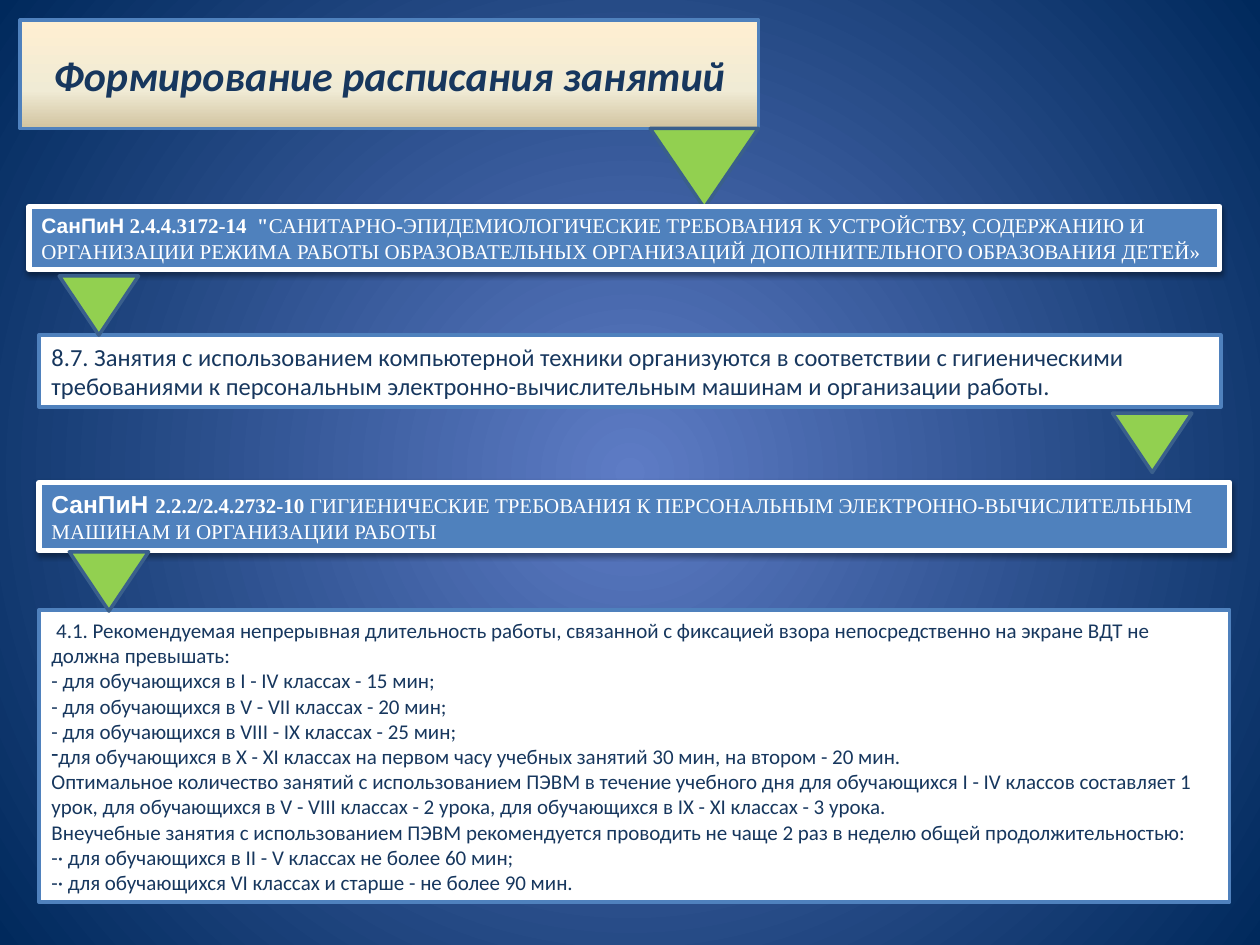
from dataclasses import dataclass

import pptx
import pptx.dml.color
import pptx.enum.shapes
import pptx.enum.text
import pptx.oxml
import pptx.oxml.ns
import pptx.util
from pptx.util import Inches

SHAPES = pptx.enum.shapes.MSO_SHAPE
ALIGN = pptx.enum.text.PP_ALIGN
NAVY, BLUE, WHITE = "17375E", "4F81BD", "FFFFFF"
GREEN, GREEN_EDGE = "92D050", "3A5F8C"

BODY = {"name": "Calibri", "color": NAVY}
HEADING = {"name": "Times New Roman", "size": 12, "color": WHITE}
HEADING_BOLD = HEADING | {"bold": True}
HEADING_ARIAL = HEADING_BOLD | {"name": "Arial"}


@dataclass
class Run:
    text: str
    format: dict


@dataclass
class Box:
    left: float
    top: float
    width: float
    height: float
    paragraphs: list[list[Run]]
    fill: str = WHITE
    line: str = BLUE
    line_width: float = 2
    shadow: bool = False
    grow: bool = True
    align: ALIGN = ALIGN.LEFT
    dash_bullets: tuple = ()


@dataclass
class Pointer:
    left: float
    top: float
    width: float = 0.63
    height: float = 0.47


def rgb(color: str) -> pptx.dml.color.RGBColor:
    return pptx.dml.color.RGBColor.from_string(color)


def element(xml: str):
    tag_end = min(xml.index(character) for character in " />" if character in xml)
    return pptx.oxml.parse_xml(
        f"{xml[:tag_end]} {pptx.oxml.ns.nsdecls('a')}{xml[tag_end:]}")


def set_gradient(fill, parent, stops: list, direction: str) -> None:
    """Replace the default gradient in parent by the given stops."""
    fill.gradient()
    default = next(parent.iter(pptx.oxml.ns.qn("a:gradFill")))
    stop_xml = "".join(
        f'<a:gs pos="{position * 1000}"><a:srgbClr val="{color}"/></a:gs>'
        for position, color in stops)
    gradient = element(
        f'<a:gradFill rotWithShape="1"><a:gsLst>{stop_xml}</a:gsLst>{direction}</a:gradFill>')
    default.getparent().replace(default, gradient)


def add_shape(slide, kind, item: Box | Pointer, fill: str, line: str, line_width: float):
    shape = slide.shapes.add_shape(
        kind, *(Inches(value) for value in (item.left, item.top, item.width, item.height)))
    shape.shadow.inherit = False
    shape.fill.solid()
    shape.fill.fore_color.rgb = rgb(fill)
    shape.line.color.rgb = rgb(line)
    shape.line.width = pptx.util.Pt(line_width)
    return shape


def add_pointer(slide, pointer: Pointer) -> None:
    add_shape(slide, SHAPES.FLOWCHART_MERGE, pointer, GREEN, GREEN_EDGE, 2)


def add_run(paragraph, content: Run) -> None:
    run = paragraph.add_run()
    run.text = content.text
    for name, value in content.format.items():
        if name == "color":
            run.font.color.rgb = rgb(value)
        else:
            setattr(run.font, name, pptx.util.Pt(value) if name == "size" else value)


def add_box(slide, box: Box):
    shape = add_shape(slide, SHAPES.RECTANGLE, box, box.fill, box.line, box.line_width)
    if box.shadow:
        effects = shape._element.spPr.find(pptx.oxml.ns.qn("a:effectLst"))
        effects.append(element(
            f'<a:outerShdw blurRad="{pptx.util.Pt(3.1)}" dist="{pptx.util.Pt(1.6)}" '
            'dir="5400000" rotWithShape="0"><a:srgbClr val="000000">'
            '<a:alpha val="38000"/></a:srgbClr></a:outerShdw>'))
    frame = shape.text_frame
    frame.word_wrap = True
    frame.vertical_anchor = pptx.enum.text.MSO_ANCHOR.MIDDLE
    if box.grow:
        frame.auto_size = pptx.enum.text.MSO_AUTO_SIZE.SHAPE_TO_FIT_TEXT
    for index, runs in enumerate(box.paragraphs):
        paragraph = frame.add_paragraph() if index else frame.paragraphs[0]
        paragraph.alignment = box.align
        if index in box.dash_bullets:
            paragraph._p.get_or_add_pPr().append(element('<a:buChar char="-"/>'))
        for run in runs:
            add_run(paragraph, run)
    return shape


TITLE = Box(
    0.16, 0.16, 5.86, 0.86,
    [[Run("Формирование расписания занятий",
          BODY | {"size": 24, "bold": True, "italic": True})]],
    grow=False, align=ALIGN.CENTER)

RULES = [
    "\u00204.1. Рекомендуемая непрерывная длительность работы, связанной с фиксацией взора "
    "непосредственно на экране ВДТ не должна превышать:",
    "- для обучающихся в I - IV классах - 15 мин;",
    "- для обучающихся в V - VII классах - 20 мин;",
    "- для обучающихся в VIII - IX классах - 25 мин;",
    "для обучающихся в X - XI классах на первом часу учебных занятий 30 мин, "
    "на втором - 20 мин.",
    "Оптимальное количество занятий с использованием ПЭВМ в течение учебного дня для "
    "обучающихся I - IV классов составляет 1 урок, для обучающихся в V - VIII классах - "
    "2 урока, для обучающихся в IX - XI классах - 3 урока.",
    "Внеучебные занятия с использованием ПЭВМ рекомендуется проводить не чаще 2 раз в "
    "неделю общей продолжительностью:",
    "-· для обучающихся в II - V классах не более 60 мин;",
    "-· для обучающихся VI классах и старше - не более 90 мин.",
]
RULES[0] = " " + RULES[0].lstrip()

BOXES = [
    Box(0.23, 1.64, 9.45, 0.5,
        [[Run("СанПиН", HEADING_ARIAL),
          Run(' 2.4.4.3172-14  "', HEADING_BOLD),
          Run("САНИТАРНО-ЭПИДЕМИОЛОГИЧЕСКИЕ ТРЕБОВАНИЯ К УСТРОЙСТВУ, СОДЕРЖАНИЮ И "
              "ОРГАНИЗАЦИИ РЕЖИМА РАБОТЫ ОБРАЗОВАТЕЛЬНЫХ ОРГАНИЗАЦИЙ ДОПОЛНИТЕЛЬНОГО "
              "ОБРАЗОВАНИЯ ДЕТЕЙ»", HEADING)]],
        fill=BLUE, line=WHITE, line_width=3, shadow=True),
    Box(0.31, 2.66, 9.38, 0.57,
        [[Run("8.7. Занятия с использованием компьютерной техники организуются в "
              "соответствии с гигиеническими требованиями к персональным "
              "электронно-вычислительным машинам и организации работы.",
              BODY | {"size": 14})]]),
    Box(0.31, 3.83, 9.45, 0.54,
        [[Run("СанПиН ", HEADING_ARIAL | {"size": 14}),
          Run("2.2.2/2.4.2732-10", HEADING_BOLD),
          Run(" ГИГИЕНИЧЕСКИЕ ТРЕБОВАНИЯ К ПЕРСОНАЛЬНЫМ ЭЛЕКТРОННО-ВЫЧИСЛИТЕЛЬНЫМ "
              "МАШИНАМ И ОРГАНИЗАЦИИ РАБОТЫ", HEADING)]],
        fill=BLUE, line=WHITE, line_width=3, shadow=True),
    Box(0.31, 4.84, 9.45, 2.32,
        [[Run(text, BODY | {"size": 12})] for text in RULES], dash_bullets=(4,)),
]

TITLE_POINTER = Pointer(5.16, 1.02, 0.86, 0.63)
POINTERS = [Pointer(0.47, 2.19), Pointer(8.83, 3.28), Pointer(0.55, 4.38)]


def main() -> None:
    presentation = pptx.Presentation()
    presentation.slide_width, presentation.slide_height = Inches(10), Inches(7.5)
    slide = presentation.slides.add_slide(presentation.slide_layouts[6])

    # Background: light centre, dark corners
    set_gradient(slide.background.fill, slide._element, [(0, "5E7CC5"), (100, "00295C")],
                 '<a:path path="circle"><a:fillToRect l="50000" t="50000" r="50000" '
                 'b="50000"/></a:path>')

    # Title plate
    title = add_box(slide, TITLE)
    set_gradient(title.fill, title._element.spPr,
                 [(0, "FFEFD1"), (65, "F0EBD5"), (100, "D1C39F")],
                 '<a:lin ang="5400000" scaled="0"/>')
    add_pointer(slide, TITLE_POINTER)

    # Regulations and their clauses, then the pointers between them
    for box in BOXES:
        add_box(slide, box)
    for pointer in POINTERS:
        add_pointer(slide, pointer)

    presentation.save("out.pptx")


if __name__ == "__main__":
    main()
